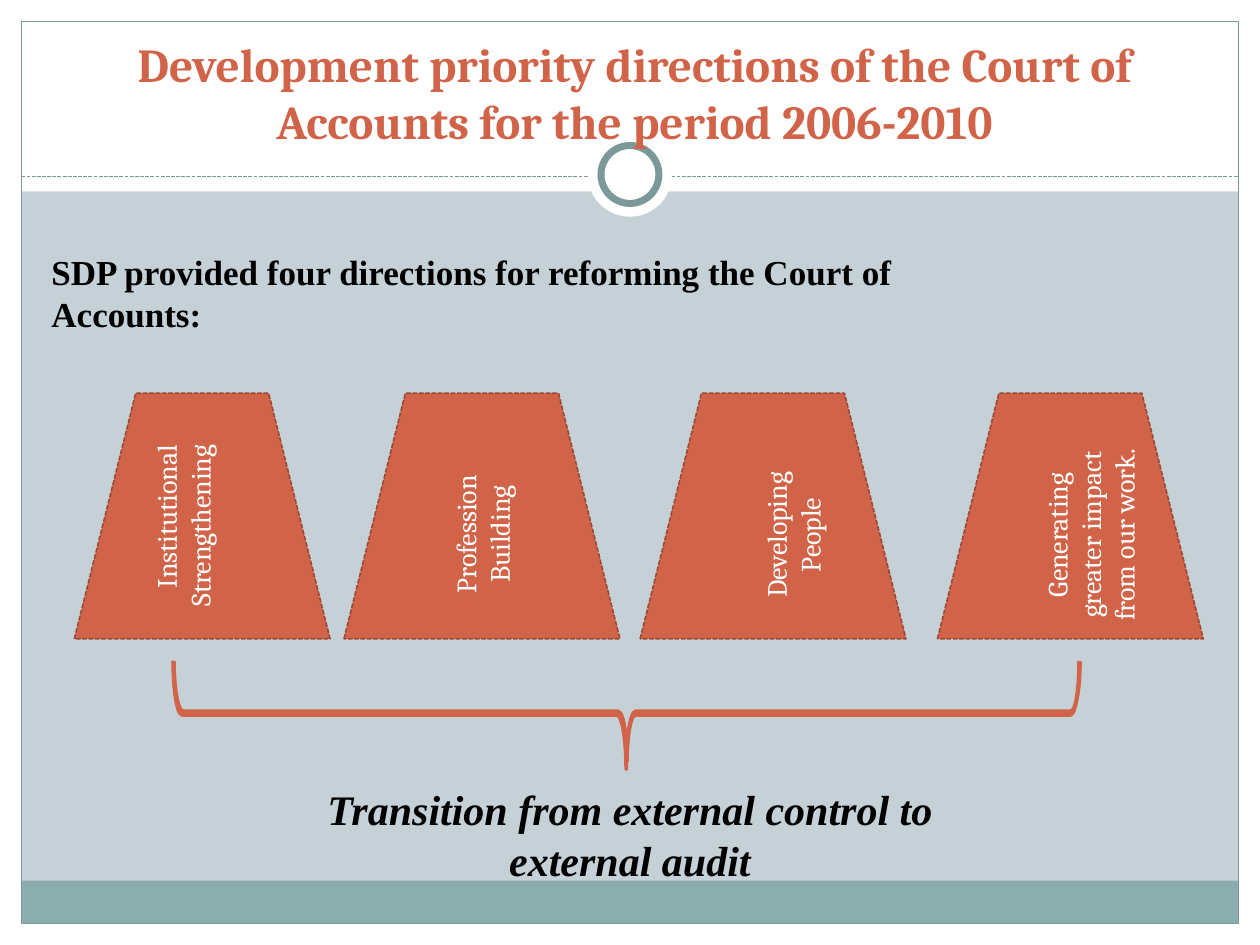
from pptx import Presentation
from pptx import util as u
from pptx.dml.color import RGBColor
from pptx.enum import dml, shapes, text
from pptx.oxml import ns
from lxml import etree

# Content
TITLE = "Development priority directions of the Court of Accounts for the period 2006-2010"
LEAD = "SDP provided four directions for reforming the Court of Accounts:"
RESULT = "Transition from external control to external audit"
RIGHT, CENTER = text.PP_ALIGN.RIGHT, text.PP_ALIGN.CENTER
# label, left, width, alignment, side whose margin takes one extra line
DIRECTIONS = [
    ("Institutional Strengthening", 0.59, 2.03, RIGHT, "right"),
    ("Profession Building", 2.73, 2.19, CENTER, None),
    ("Developing People", 5.08, 2.11, CENTER, "left"),
    ("Generating greater impact from our work.", 7.44, 2.11, CENTER, "left"),
]
BRACES = [(4.54, 2.08, 0.86, 7.19, 0.083), (4.58, 2.05, 0.79, 7.19, 0.091)]

THEME = dict(
    bg="C5D1D7", white="FFFFFF", black="000000", accent="D16349",
    edge="9B4936", teal="7C999A", band="8CADAE",
    head="Cambria", body="Times New Roman",
    title=27, lead=20, label=16, result=24,
)
W, H, EDGE = 10, 7.5, 0.17
INNER_W, INNER_H = W - 2 * EDGE, H - 2 * EDGE
HEADER_H, RULE_Y, RING_Y = 1.52, 1.4, 1.385
LABEL_Y, LABEL_H, LINE_GAP = 3.12, 1.95, 0.26

prs = Presentation()
prs.slide_width, prs.slide_height = u.Inches(W), u.Inches(H)
s = prs.slides.add_slide(prs.slide_layouts[6])


def color(name):
    return RGBColor.from_string(THEME[name])


def inches(*values):
    return [u.Inches(v) for v in values]


def set_line(line, name, width, dashed=False):
    line.color.rgb = color(name)
    line.width = u.Pt(width)
    if dashed:
        line.dash_style = dml.MSO_LINE.SQUARE_DOT


def add_shape(kind, box, fill=None, line=None, width=0.75, dashed=False):
    sp = s.shapes.add_shape(kind, *inches(*box))
    sp.shadow.inherit = False
    if fill:
        sp.fill.solid()
        sp.fill.fore_color.rgb = color(fill)
    else:
        sp.fill.background()
    if line:
        set_line(sp.line, line, width, dashed)
    else:
        sp.line.fill.background()
    return sp


def write(sp, words, size, font, ink, align=None, bold=None, italic=None,
          anchor=text.MSO_ANCHOR.TOP):
    tf = sp.text_frame
    tf.word_wrap = True
    tf.vertical_anchor = anchor
    p = tf.paragraphs[0]
    p.alignment = align
    r = p.add_run()
    r.text = words
    r.font.size, r.font.name = u.Pt(THEME[size]), THEME[font]
    r.font.bold, r.font.italic = bold, italic
    r.font.color.rgb = color(ink)
    return tf


def add_text(box, *args, **kwargs):
    return write(s.shapes.add_textbox(*inches(*box)), *args, **kwargs)


# Background, margins and footer band
s.background.fill.solid()
s.background.fill.fore_color.rgb = color("bg")
RECT, OVAL = shapes.MSO_SHAPE.RECTANGLE, shapes.MSO_SHAPE.OVAL
for box in [(0, H - EDGE, W, EDGE), (0, 0, W, HEADER_H),
            (0, 0, EDGE, H), (W - EDGE, 0, EDGE, H)]:
    add_shape(RECT, box, "white")
add_shape(RECT, (EDGE, 6.99, INNER_W, 0.34), "band")
add_shape(RECT, (EDGE, EDGE, INNER_W, INNER_H), line="teal")

# Dashed rule with ring
rule = s.shapes.add_connector(shapes.MSO_CONNECTOR.STRAIGHT,
                              *inches(EDGE, RULE_Y, W - EDGE, RULE_Y))
set_line(rule.line, "teal", 0.75, True)
etree.SubElement(rule._element.spPr, ns.qn("a:effectLst"))
for size, line in [(0.67, None), (0.46, "teal")]:
    add_shape(OVAL, (W / 2 - size / 2, RING_Y - size / 2, size, size),
              "white", line, 4)

# Title and lead sentence
add_text((0.35, 0.21, 9.37, 1.02), TITLE, "title", "head", "accent", CENTER,
         bold=True, anchor=text.MSO_ANCHOR.BOTTOM)
add_text((0.31, 1.94, 7.05, 0.77), LEAD, "lead", "body", "black", bold=True)

# Four directions, text reading upwards
for label, left, width, align, side in DIRECTIONS:
    sp = add_shape(shapes.MSO_SHAPE.TRAPEZOID, (left, LABEL_Y, width, LABEL_H),
                   "accent", "edge", 0.9, True)
    tf = write(sp, label, "label", "head", "white", align,
               anchor=text.MSO_ANCHOR.MIDDLE)
    tf._txBody.bodyPr.set("vert", "vert270")
    if side == "left":
        tf.margin_left = u.Inches(0.1 + LINE_GAP)
    elif side == "right":
        tf.margin_right = u.Inches(0.1 + LINE_GAP)

# Result under the braces
add_text((2.5, 6.17, 5, 0.91), RESULT, "result", "body", "black", CENTER,
         bold=True, italic=True)
for *box, bend in BRACES:
    brace = add_shape(shapes.MSO_SHAPE.RIGHT_BRACE, box, line="accent", width=2.25)
    brace.rotation = 90
    brace.adjustments[0] = bend
    brace.adjustments[1] = 0.5

prs.save("out.pptx")
